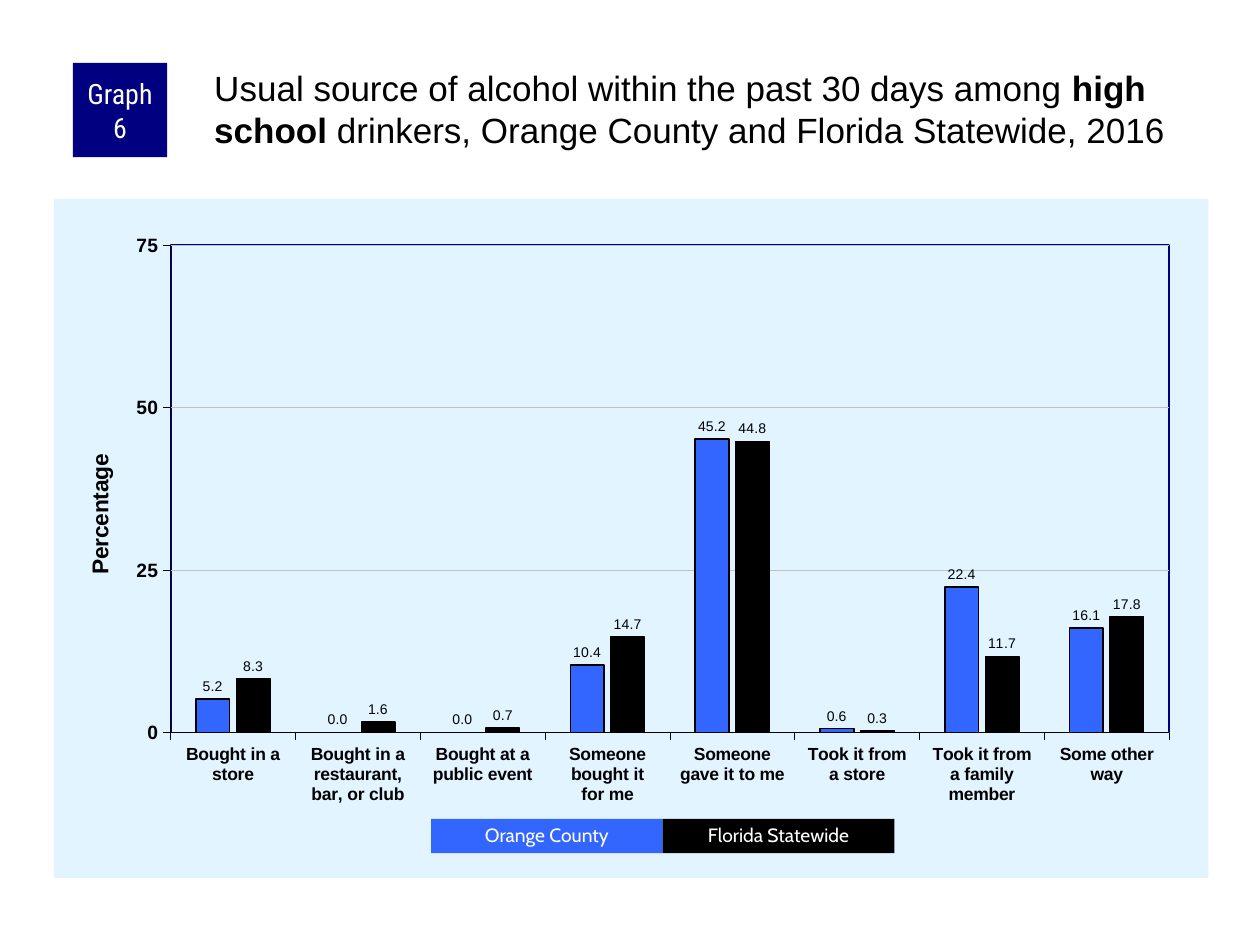
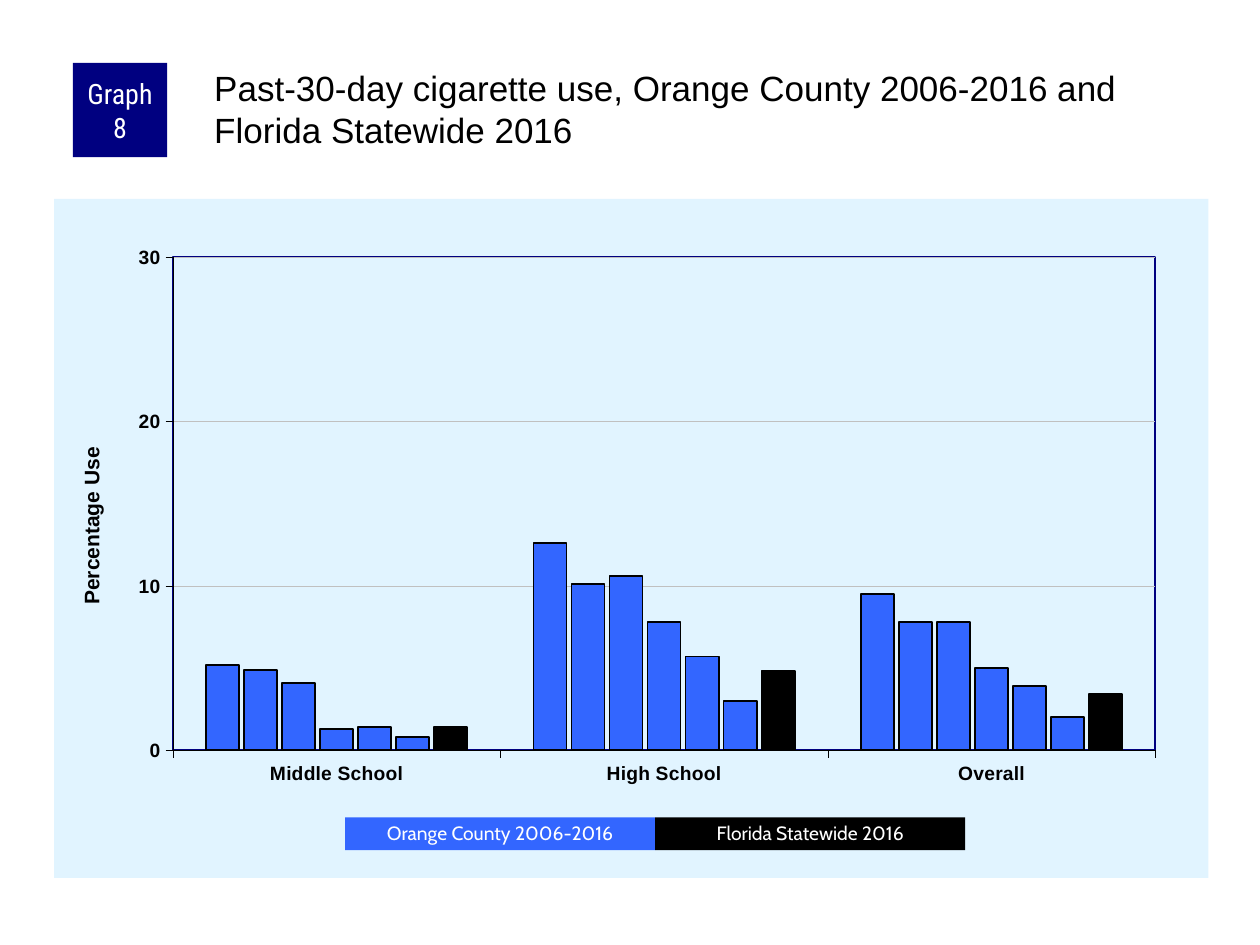
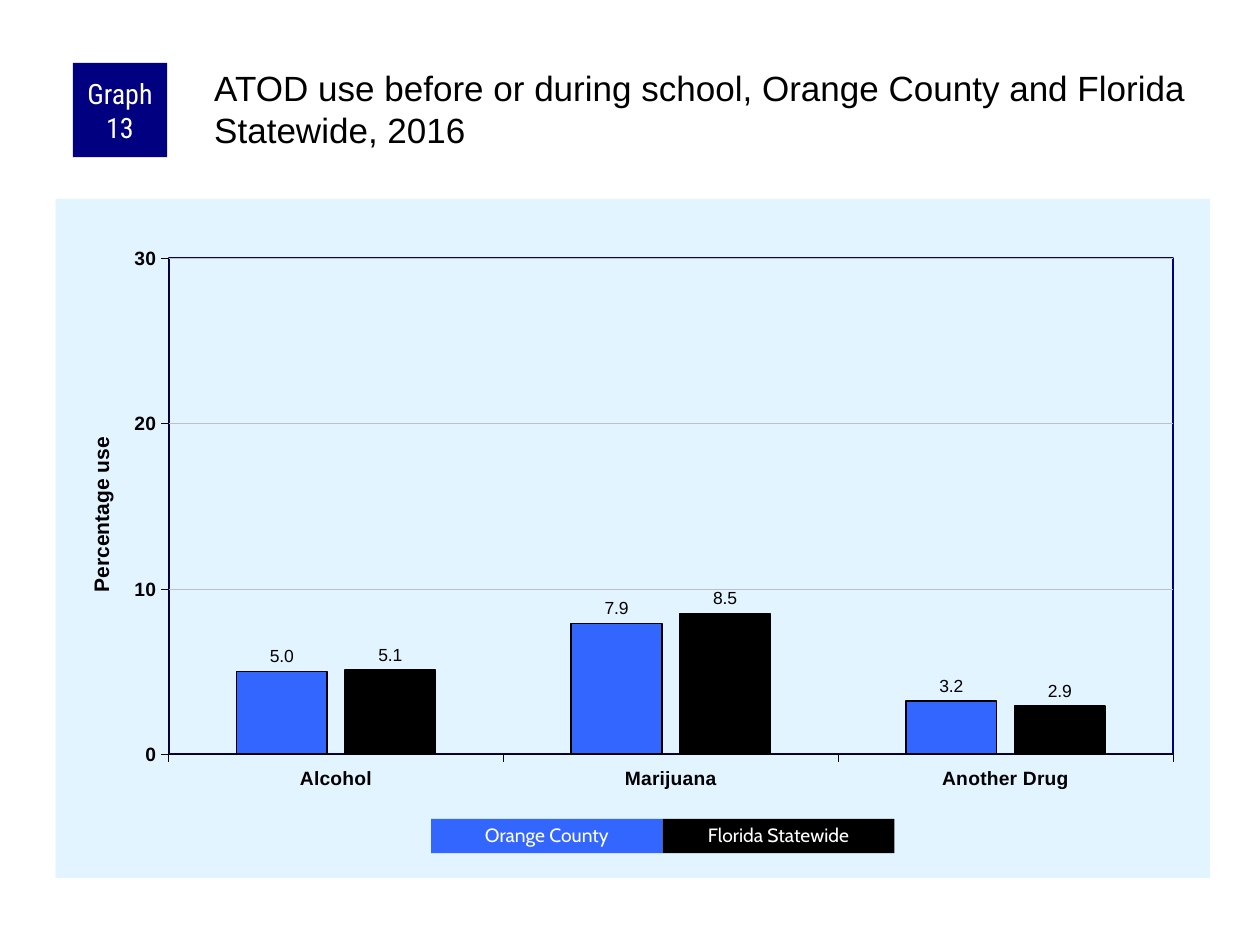
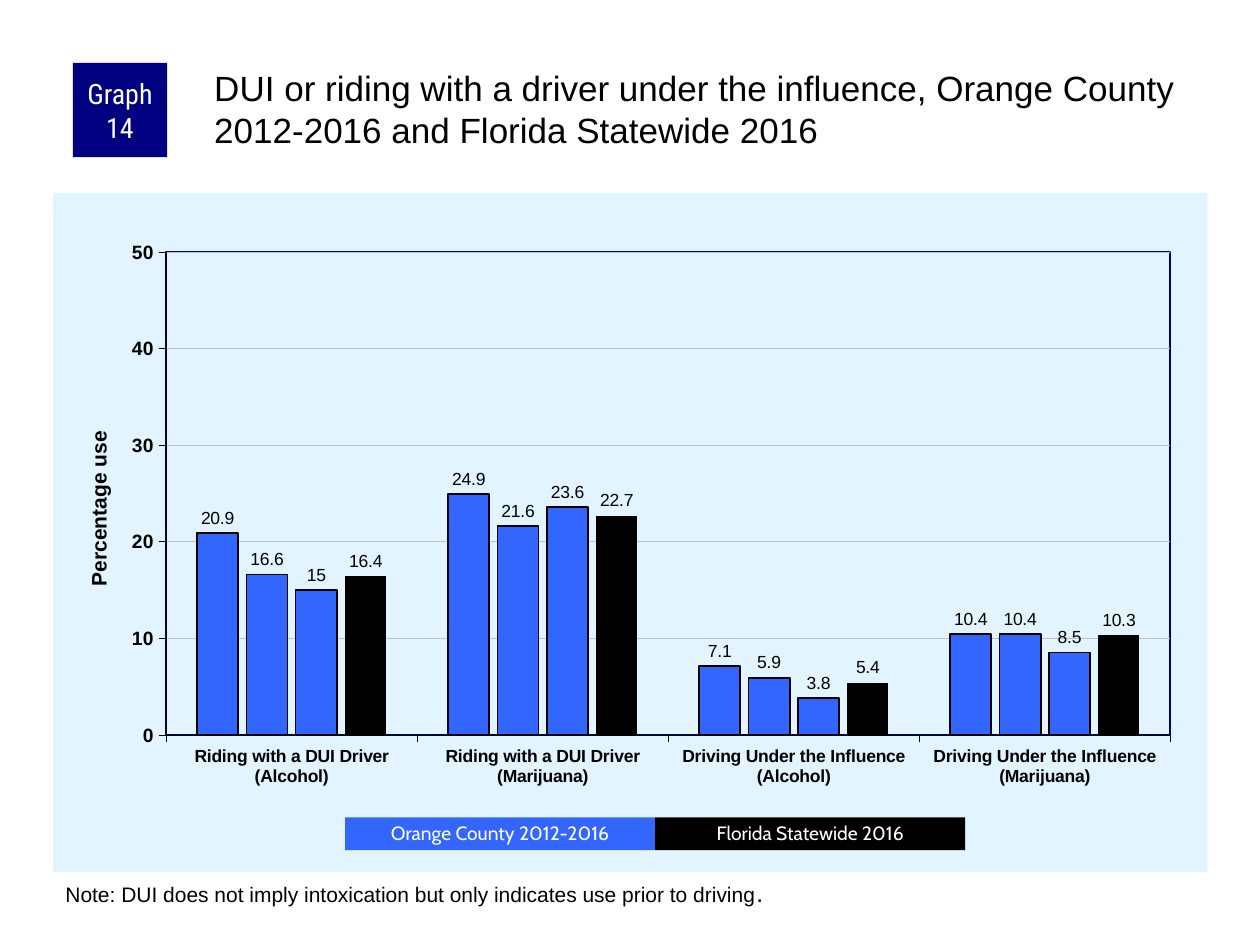
"""Build four survey graph slides, each with a badge, title, column chart and key."""
import pptx
import pptx.chart.data
import pptx.dml.color
import pptx.enum.chart
import pptx.enum.shapes
import pptx.enum.text
import pptx.oxml
import pptx.oxml.ns
import pptx.util

Cm, Pt = pptx.util.Cm, pptx.util.Pt
RGB = pptx.dml.color.RGBColor
TEXT = pptx.enum.text

BLACK = RGB(0, 0, 0)
WHITE = RGB(255, 255, 255)
NAVY = RGB(0, 0, 128)
BLUE = RGB(0x33, 0x66, 0xFF)
PALE = RGB(0xE1, 0xF4, 0xFF)
GREY = RGB(0xC0, 0xC0, 0xC0)

SHORT = {"left": 8.69, "top": 16.51, "width": 4.67, "height": 0.69}
LONG = {"left": 6.96, "top": 16.48, "width": 6.25, "height": 0.66}

GRAPHS = [
    {
        "badge": "Graph 6",
        "title": [("Usual source of alcohol within the past 30 days among ", False),
                  ("high school", True),
                  (" drinkers, Orange County and Florida Statewide, 2016", False)],
        "place": (1.09, 4.01),
        "plot": (0.101, 0.068, 0.865, 0.718),
        "axis": ("Percentage", 13, 0.024, 0.37),
        "scale": (75, 25),
        "cats": ["Bought in a store", "Bought in a restaurant, bar, or club",
                 "Bought at a public event", "Someone bought it\nfor me",
                 "Someone\ngave it to me", "Took it from\na store",
                 "Took it from\na family member", "Some other way"],
        "cat_size": 10,
        "rows": [[5.2, 0, 0, 10.4, 45.2, 0.6, 22.4, 16.1],
                 [8.3, 1.6, 0.7, 14.7, 44.8, 0.3, 11.7, 17.8]],
        "lines": [1, 0.75],
        "gaps": (150, -20),
        "labels": (8, ["0.0", "0.0"]),
        "key": (["Orange County", "Florida Statewide"], SHORT),
    },
    {
        "badge": "Graph 8",
        "title": [("Past-30-day cigarette use, Orange County 2006-2016 and "
                   "Florida Statewide 2016", False)],
        "place": (1.09, 4.01),
        "plot": (0.103, 0.086, 0.851, 0.726),
        "axis": ("Percentage Use", 12, 0.018, 0.36),
        "scale": (30, 10),
        "cats": ["Middle School", "High School", "Overall"],
        "cat_size": 11,
        "rows": [[5.2, 12.6, 9.5], [4.9, 10.1, 7.8], [4.1, 10.6, 7.8],
                 [1.3, 7.8, 5], [1.4, 5.7, 3.9], [0.8, 3, 2], [1.4, 4.8, 3.4]],
        "lines": [1] * 7,
        "gaps": (200, -15),
        "labels": None,
        "key": (["Orange County 2006-2016", "Florida Statewide 2016"], LONG),
    },
    {
        "badge": "Graph 13",
        "title": [("ATOD use before or during school, Orange County and "
                   "Florida Statewide, 2016", False)],
        "place": (1.12, 4.01),
        "plot": (0.098, 0.087, 0.87, 0.731),
        "axis": ("Percentage use", 12, 0.025, 0.345),
        "scale": (30, 10),
        "cats": ["Alcohol", "Marijuana", "Another Drug"],
        "cat_size": 11,
        "rows": [[5, 7.9, 3.2], [5.1, 8.5, 2.9]],
        "lines": [1, 1],
        "gaps": (150, -20),
        "labels": (10, ["0.0", "0.0"]),
        "key": (["Orange County", "Florida Statewide"], SHORT),
    },
    {
        "badge": "Graph 14",
        "title": [("DUI or riding with a driver under the influence, Orange County "
                   "2012-2016 and Florida Statewide 2016", False)],
        "place": (1.07, 3.89),
        "plot": (0.098, 0.087, 0.87, 0.711),
        "axis": ("Percentage use", 12, 0.025, 0.345),
        "scale": (50, 10),
        "cats": ["Riding with a DUI Driver (Alcohol)",
                 "Riding with a DUI Driver (Marijuana)",
                 "Driving Under the Influence (Alcohol)",
                 "Driving Under the Influence (Marijuana)"],
        "cat_size": 10,
        "rows": [[20.9, 24.9, 7.1, 10.4], [16.6, 21.6, 5.9, 10.4],
                 [15, 23.6, 3.8, 8.5], [16.4, 22.7, 5.4, 10.3]],
        "lines": [1, 1, 0.75, None],
        "gaps": (150, -20),
        "labels": (10, ["0.0", "0.0", "General", "General"]),
        "key": (["Orange County 2012-2016", "Florida Statewide 2016"], LONG),
        "note": [("Note: DUI does not imply intoxication but only indicates "
                  "use prior to driving", 12), (".", 14)],
    },
]


def style(font, size, color=BLACK, bold=False, name="Arial"):
    font.name, font.size, font.bold = name, Pt(size), bold
    font.color.rgb = color


def add_box(slide, place, fill, text, size, name):
    box = slide.shapes.add_shape(pptx.enum.shapes.MSO_SHAPE.RECTANGLE, *map(Cm, place))
    box.shadow.inherit = False
    box.fill.solid()
    box.fill.fore_color.rgb = fill
    box.line.fill.background()
    frame = box.text_frame
    frame.word_wrap = True
    frame.vertical_anchor = TEXT.MSO_ANCHOR.MIDDLE
    frame.text = text
    par = frame.paragraphs[0]
    par.alignment = TEXT.PP_ALIGN.CENTER
    style(par.runs[0].font, size, WHITE, name=name)
    return box


def add_text(slide, place, parts):
    frame = slide.shapes.add_textbox(*map(Cm, place)).text_frame
    frame.word_wrap = True
    for text, size, bold in parts:
        run = frame.paragraphs[0].add_run()
        run.text = text
        style(run.font, size, bold=bold)
    return frame


def make_xml(text):
    head, tail = text.split(">", 1)
    slash = "/" if head.endswith("/") else ""
    spaces = pptx.oxml.ns.nsdecls("c", "a")
    return pptx.oxml.parse_xml(f"{head.rstrip('/')} {spaces}{slash}>{tail}")


def make_layout(**parts):
    inner = '<c:layoutTarget val="inner"/>' if "w" in parts else ""
    modes = "".join(f'<c:{key}Mode val="edge"/>' for key in "xy")
    spots = "".join(f'<c:{key} val="{val}"/>' for key, val in parts.items())
    return make_xml(f"<c:layout><c:manualLayout>{inner}{modes}{spots}"
                    "</c:manualLayout></c:layout>")


def set_frame(chart, graph):
    root = chart._chartSpace
    for old in root.xpath("c:chart/c:plotArea/c:layout | .//c:valAx/c:title/c:layout"):
        old.getparent().remove(old)
    area = root.xpath("c:chart/c:plotArea")[0]
    area.insert(0, make_layout(**dict(zip("xywh", graph["plot"]))))
    area.append(make_xml("<c:spPr><a:noFill/><a:ln w=\"12700\"><a:solidFill>"
                         f'<a:srgbClr val="{NAVY}"/></a:solidFill></a:ln></c:spPr>'))
    root.xpath("c:chart")[0].addnext(make_xml(
        f'<c:spPr><a:solidFill><a:srgbClr val="{PALE}"/></a:solidFill>'
        "<a:ln><a:noFill/></a:ln></c:spPr>"))
    title = root.xpath(".//c:valAx/c:title")[0]
    left, top = graph["axis"][2:]
    title.xpath("c:tx")[0].addnext(make_layout(x=left, y=top))
    body = title.xpath(".//a:bodyPr")[0]
    body.set("rot", "-5400000")
    body.set("vert", "horz")


def set_axes(chart, graph):
    for axis, size in ((chart.category_axis, graph["cat_size"]), (chart.value_axis, 11)):
        style(axis.tick_labels.font, size, bold=True)
        axis.major_tick_mark = pptx.enum.chart.XL_TICK_MARK.OUTSIDE
        axis.minor_tick_mark = pptx.enum.chart.XL_TICK_MARK.NONE
        axis.format.line.color.rgb = BLACK
        axis.format.line.width = Pt(0.25)
    axis = chart.value_axis
    axis.minimum_scale = 0
    axis.maximum_scale, axis.major_unit = graph["scale"]
    grid = axis.major_gridlines.format.line
    grid.color.rgb, grid.width = GREY, Pt(0.25)
    text, size = graph["axis"][:2]
    frame = axis.axis_title.text_frame
    frame.text = text
    style(frame.paragraphs[0].runs[0].font, size, bold=True)


def set_bars(plot, graph):
    plot.vary_by_categories = False
    plot.gap_width, plot.overlap = graph["gaps"]
    last = len(graph["rows"]) - 1
    for num, (bar, width) in enumerate(zip(plot.series, graph["lines"])):
        bar.invert_if_negative = False
        bar.format.fill.solid()
        bar.format.fill.fore_color.rgb = BLACK if num == last else BLUE
        if width:
            bar.format.line.color.rgb = BLACK
            bar.format.line.width = Pt(width)
        else:
            bar.format.line.fill.background()
        if graph["labels"]:
            size, forms = graph["labels"]
            label = bar.data_labels
            label.show_value = True
            label.number_format = forms[num]
            label.number_format_is_linked = False
            label.position = pptx.enum.chart.XL_LABEL_POSITION.OUTSIDE_END
            style(label.font, size)


def add_graph(slide, graph):
    data = pptx.chart.data.CategoryChartData()
    data.categories = graph["cats"]
    for num, row in enumerate(graph["rows"], 1):
        data.add_series(f"Series {num}", row)
    place = (*graph["place"], 23.27, 13.69)
    chart = slide.shapes.add_chart(
        pptx.enum.chart.XL_CHART_TYPE.COLUMN_CLUSTERED, *map(Cm, place), data).chart
    chart.has_title = chart.has_legend = False
    style(chart.font, 11.5)
    set_axes(chart, graph)
    set_bars(chart.plots[0], graph)
    set_frame(chart, graph)


def add_key(slide, names, spot):
    for num, (name, fill) in enumerate(zip(names, (BLUE, BLACK))):
        left = spot["left"] + num * spot["width"]
        place = (left, spot["top"], spot["width"], spot["height"])
        box = add_box(slide, place, fill, name, 11, "Cabin")
        box.text_frame.paragraphs[0].line_spacing = 0.9


def add_slide(deck, graph):
    slide = deck.slides.add_slide(deck.slide_layouts[6])
    add_graph(slide, graph)
    badge = add_box(slide, (1.47, 1.27, 1.9, 1.9), NAVY, graph["badge"], 16,
                    "Roboto Condensed").text_frame
    badge.margin_left = badge.margin_right = Cm(0.13)
    badge.margin_top = badge.margin_bottom = 0
    title = add_text(slide, (4.24, 1.27, 20.12, 2.11),
                     [(text, 20, bold) for text, bold in graph["title"]])
    title.margin_left = title.margin_top = Cm(0.08)
    title.margin_right = title.margin_bottom = 0
    if "note" in graph:
        add_text(slide, (1.07, 17.58, 23.29, 0.86),
                 [(text, size, False) for text, size in graph["note"]])
    add_key(slide, *graph["key"])


def main():
    deck = pptx.Presentation()
    deck.slide_width, deck.slide_height = Cm(25.4), Cm(19.05)
    for graph in GRAPHS:
        add_slide(deck, graph)
    deck.save("out.pptx")


if __name__ == "__main__":
    main()
